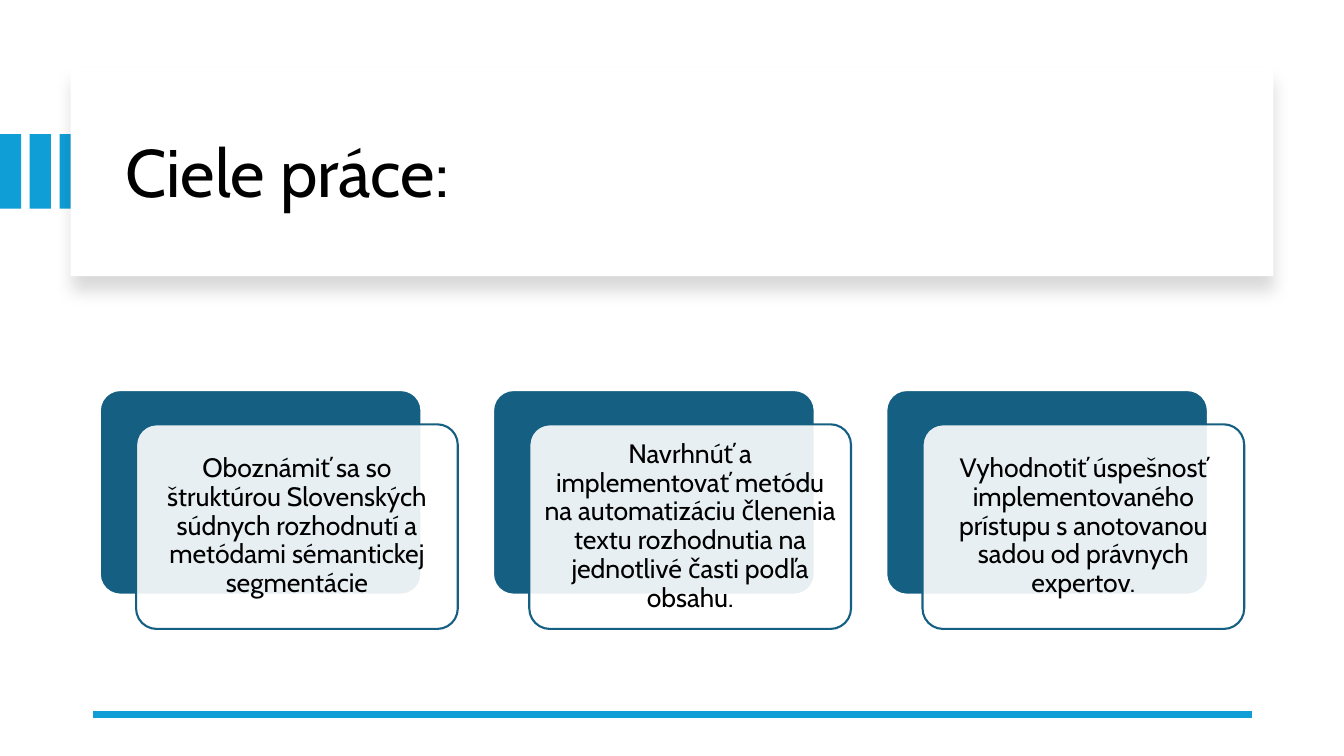
from dataclasses import dataclass

import lxml.etree
import pptx
import pptx.dml.color
import pptx.enum.shapes
import pptx.enum.text
import pptx.oxml
import pptx.oxml.ns
import pptx.util

Inches = pptx.util.Inches
Pt = pptx.util.Pt
RGB = pptx.dml.color.RGBColor
SHAPE = pptx.enum.shapes.MSO_SHAPE
ALIGN = pptx.enum.text.PP_ALIGN
qn = pptx.oxml.ns.qn


@dataclass(frozen=True)
class Theme:
    font: str = "Cabin"
    text: RGB = RGB(0, 0, 0)
    white: RGB = RGB(255, 255, 255)
    accent: RGB = RGB(0x0F, 0x9E, 0xD5)
    card: RGB = RGB(0x15, 0x60, 0x82)
    title_size: int = 48
    card_size: int = 19
    outline: float = 1.5
    rule: float = 4.5


THEME = Theme()

GOALS = [
    "Oboznámiť sa so štruktúrou Slovenských súdnych rozhodnutí a metódami sémantickej segmentácie",
    "Navrhnúť a implementovať metódu na automatizáciu členenia textu rozhodnutia na jednotlivé časti podľa obsahu.",
    "Vyhodnotiť úspešnosť implementovaného prístupu s anotovanou sadou od právnych expertov.",
]


def add_block(slide, kind, left, top, width, height, fill, line=None):
    block = slide.shapes.add_shape(
        kind, Inches(left), Inches(top), Inches(width), Inches(height)
    )
    block.shadow.inherit = False
    block.fill.solid()
    block.fill.fore_color.rgb = fill
    if line is None:
        block.line.fill.background()
    else:
        block.line.color.rgb = line
        block.line.width = Pt(THEME.outline)
    return block


def set_text(shape, text, size, align):
    frame = shape.text_frame
    frame.text = text
    frame.word_wrap = True
    frame.auto_size = pptx.enum.text.MSO_AUTO_SIZE.NONE
    frame.vertical_anchor = pptx.enum.text.MSO_ANCHOR.MIDDLE
    paragraph = frame.paragraphs[0]
    paragraph.alignment = align
    paragraph.line_spacing = 0.9
    paragraph.font.name = THEME.font
    paragraph.font.size = Pt(size)
    paragraph.font.color.rgb = THEME.text


def add_title_panel(slide):
    panel = add_block(slide, SHAPE.RECTANGLE, 0.7, 0.67, 11.93, 2.07, THEME.white)
    effects = panel.element.spPr.find(qn("a:effectLst"))
    shadow = lxml.etree.SubElement(
        effects, qn("a:outerShdw"),
        blurRad=str(Pt(11)), dist=str(Pt(10)), dir="5400000", rotWithShape="0",
    )
    color = lxml.etree.SubElement(shadow, qn("a:srgbClr"), val=str(THEME.text))
    lxml.etree.SubElement(color, qn("a:alpha"), val="15000")


def place_title(slide, text):
    title = slide.shapes.title
    title.left, title.top = Inches(1.14), Inches(0.89)
    title.width, title.height = Inches(11.13), Inches(1.7)
    set_text(title, text, THEME.title_size, ALIGN.LEFT)
    title.element.getparent().append(title.element)


def add_rule(slide):
    rule = slide.shapes.add_connector(
        pptx.enum.shapes.MSO_CONNECTOR.STRAIGHT,
        Inches(12.42), Inches(7.09), Inches(0.92), Inches(7.09),
    )
    rule.line.color.rgb = THEME.accent
    rule.line.width = Pt(THEME.rule)
    lxml.etree.SubElement(rule.element.spPr, qn("a:effectLst"))


def add_goal_card(slide, left, top, goal):
    width, height = 3.19, 2.03
    backing = add_block(
        slide, SHAPE.ROUNDED_RECTANGLE, left, top, width, height,
        THEME.card, THEME.white,
    )
    card = add_block(
        slide, SHAPE.ROUNDED_RECTANGLE, left + 0.36, top + 0.34, width, height,
        THEME.white, THEME.card,
    )
    for layer in (backing, card):
        layer.adjustments[0] = 0.1
    color = card.element.spPr.find(qn("a:solidFill")).find(qn("a:srgbClr"))
    lxml.etree.SubElement(color, qn("a:alpha"), val="90000")
    frame = card.text_frame
    frame.margin_left = frame.margin_right = Inches(0.08)
    frame.margin_top = frame.margin_bottom = Inches(0.08)
    set_text(card, goal, THEME.card_size, ALIGN.CENTER)


def main():
    deck = pptx.Presentation()
    deck.slide_width, deck.slide_height = Inches(13.33), Inches(7.5)
    slide = deck.slides.add_slide(deck.slide_layouts.get_by_name("Title Only"))
    for index in range(3):
        add_block(
            slide, SHAPE.RECTANGLE, index * 0.59 / 2, 1.33, 0.21, 0.74, THEME.accent
        )
    add_title_panel(slide)
    place_title(slide, "Ciele práce:")
    add_rule(slide)
    for index, goal in enumerate(GOALS):
        add_goal_card(slide, 0.99 + index * 3.9, 3.87, goal)
    deck.save("out.pptx")


if __name__ == "__main__":
    main()
